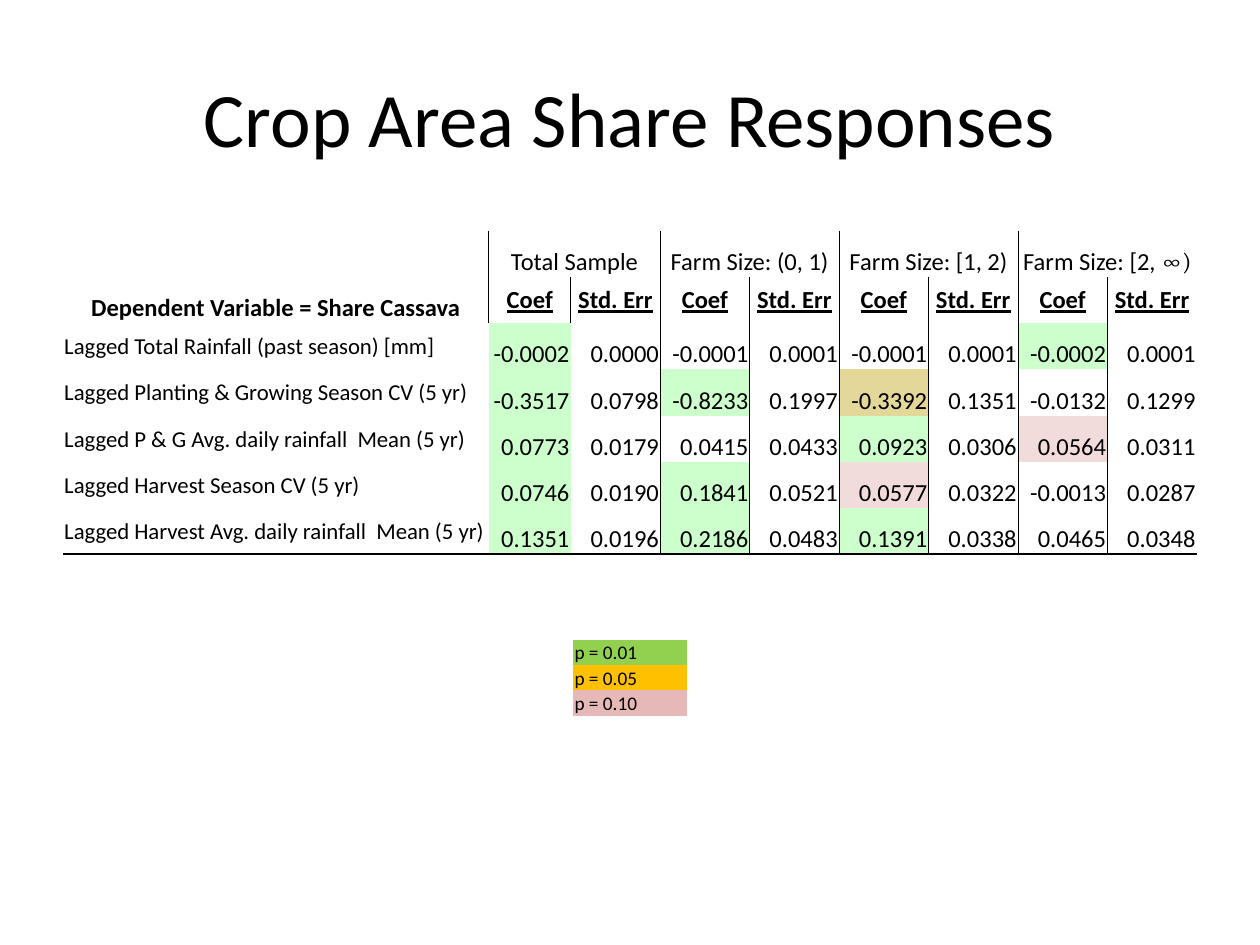
from lxml import etree
from pptx import Presentation
from pptx.dml.color import RGBColor
from pptx.enum.text import MSO_ANCHOR as Anchor, PP_ALIGN as Align
from pptx.oxml.ns import qn
from pptx.util import Inches, Pt

BLACK = RGBColor(0x00, 0x00, 0x00)
GREEN = RGBColor(0xCC, 0xFF, 0xCC)
GOLD = RGBColor(0xE4, 0xD7, 0x9A)
PINK = RGBColor(0xF2, 0xDC, 0xDB)
LEGEND_GREEN = RGBColor(0x92, 0xD0, 0x50)
LEGEND_GOLD = RGBColor(0xFF, 0xC0, 0x00)
LEGEND_PINK = RGBColor(0xE6, 0xB8, 0xB7)
NO_GRID_STYLE = "{2D5ABB26-0587-4C30-8999-92F81FD0307C}"

GROUPS = ["Total Sample", "Farm Size: (0, 1)", "Farm Size: [1, 2)", "Farm Size: [2, "]
# Each row: label, (coefficient, standard error) per group, fill per coefficient
RESULTS = [
    ("Lagged Total Rainfall (past season) [mm]",
     "-0.0002 0.0000 -0.0001 0.0001 -0.0001 0.0001 -0.0002 0.0001",
     [GREEN, None, None, GREEN]),
    ("Lagged Planting & Growing Season CV (5 yr)",
     "-0.3517 0.0798 -0.8233 0.1997 -0.3392 0.1351 -0.0132 0.1299",
     [GREEN, GREEN, GOLD, None]),
    ("Lagged P & G Avg. daily rainfall  Mean (5 yr)",
     "0.0773 0.0179 0.0415 0.0433 0.0923 0.0306 0.0564 0.0311",
     [GREEN, None, GREEN, PINK]),
    ("Lagged Harvest Season CV (5 yr)",
     "0.0746 0.0190 0.1841 0.0521 0.0577 0.0322 -0.0013 0.0287",
     [GREEN, GREEN, PINK, None]),
    ("Lagged Harvest Avg. daily rainfall  Mean (5 yr)",
     "0.1351 0.0196 0.2186 0.0483 0.1391 0.0338 0.0465 0.0348",
     [GREEN, GREEN, GREEN, None]),
]
LEGEND = [("p = 0.01", LEGEND_GREEN), ("p = 0.05", LEGEND_GOLD), ("p = 0.10", LEGEND_PINK)]


def add_plain_table(slide, row_count, widths, left, top, height):
    """Add a table with no banding, grid or header style."""
    frame = slide.shapes.add_table(row_count, len(widths), Inches(left), Inches(top),
                                   Inches(sum(widths)), Inches(height))
    table = frame.table
    table.first_row = table.horz_banding = False
    frame._element.find(".//" + qn("a:tableStyleId")).text = NO_GRID_STYLE
    for column, width in zip(table.columns, widths):
        column.width = Inches(width)
    for row in table.rows:
        row.height = Inches(height / row_count)
    return table


def fill_cell(cell, text, size, align=Align.LEFT, anchor=Anchor.BOTTOM, fill=None,
              bold=False, underline=False):
    cell.margin_left = cell.margin_right = cell.margin_top = Inches(0.01)
    cell.margin_bottom = 0
    cell.vertical_anchor = anchor
    if fill is None:
        cell.fill.background()
    else:
        cell.fill.solid()
        cell.fill.fore_color.rgb = fill
    para = cell.text_frame.paragraphs[0]
    para.text = text
    para.alignment = align
    font = para.runs[0].font
    font.name, font.size, font.bold, font.underline = "Calibri", Pt(size), bold, underline
    font.color.rgb = BLACK


deck = Presentation()
deck.slide_width, deck.slide_height = Inches(10), Inches(7.5)
slide = deck.slides.add_slide(deck.slide_layouts[6])

title = slide.shapes.add_textbox(Inches(0.5), Inches(0.3), Inches(9), Inches(1.25))
frame = title.text_frame
frame.word_wrap = True
frame.vertical_anchor = Anchor.MIDDLE
frame.text = "Crop Area Share Responses"
para = frame.paragraphs[0]
para.alignment = Align.CENTER
font = para.runs[0].font
font.name, font.size, font.color.rgb = "Calibri", Pt(44), BLACK

table = add_plain_table(slide, 2 + len(RESULTS), [3.38, 0.65] + [0.71] * 7, 0.5, 1.83, 2.57)
last_row, last_column = len(table.rows) - 1, len(table.columns) - 1

# Rules between the groups, and one under the last row
for row in range(last_row + 1):
    ruled = [0, 2, 4, 6] if row < 2 else [2, 4, 6]
    for column in range(last_column + 1):
        properties = table.cell(row, column)._tc.get_or_add_tcPr()
        for side, width, shown in [("a:lnL", 0.5, column - 1 in ruled),
                                   ("a:lnR", 0.5, column in ruled),
                                   ("a:lnB", 1, row == last_row)]:
            if shown:
                line = etree.SubElement(properties, qn(side), w=str(Pt(width)))
                solid = etree.SubElement(line, qn("a:solidFill"))
                etree.SubElement(solid, qn("a:srgbClr"), val=str(BLACK))

table.cell(0, 0).merge(table.cell(1, 0))
fill_cell(table.cell(0, 0), "Dependent Variable = Share Cassava", 14, Align.CENTER, bold=True)
for index, group in enumerate(GROUPS):
    column = 1 + 2 * index
    table.cell(0, column).merge(table.cell(0, column + 1))
    fill_cell(table.cell(0, column), group, 14, Align.CENTER)
    for offset, heading in enumerate(["Coef", "Std. Err"]):
        fill_cell(table.cell(1, column + offset), heading, 14, Align.CENTER, Anchor.MIDDLE,
                  bold=True, underline=True)

infinity = table.cell(0, last_column - 1).text_frame.paragraphs[0].add_run()
infinity.text = "∞)"
font = infinity.font
font.name, font.size, font.color.rgb = "Cambria", Pt(14), BLACK

for row, (label, values, fills) in enumerate(RESULTS, start=2):
    fill_cell(table.cell(row, 0), label, 13, anchor=Anchor.MIDDLE)
    for index, value in enumerate(values.split()):
        fill = fills[index // 2] if index % 2 == 0 else None
        fill_cell(table.cell(row, index + 1), value, 14, Align.RIGHT, fill=fill)

legend = add_plain_table(slide, len(LEGEND), [0.9], 4.55, 5.08, 0.6)
for row, (label, color) in enumerate(LEGEND):
    fill_cell(legend.cell(row, 0), label, 11, fill=color)

deck.save("out.pptx")
